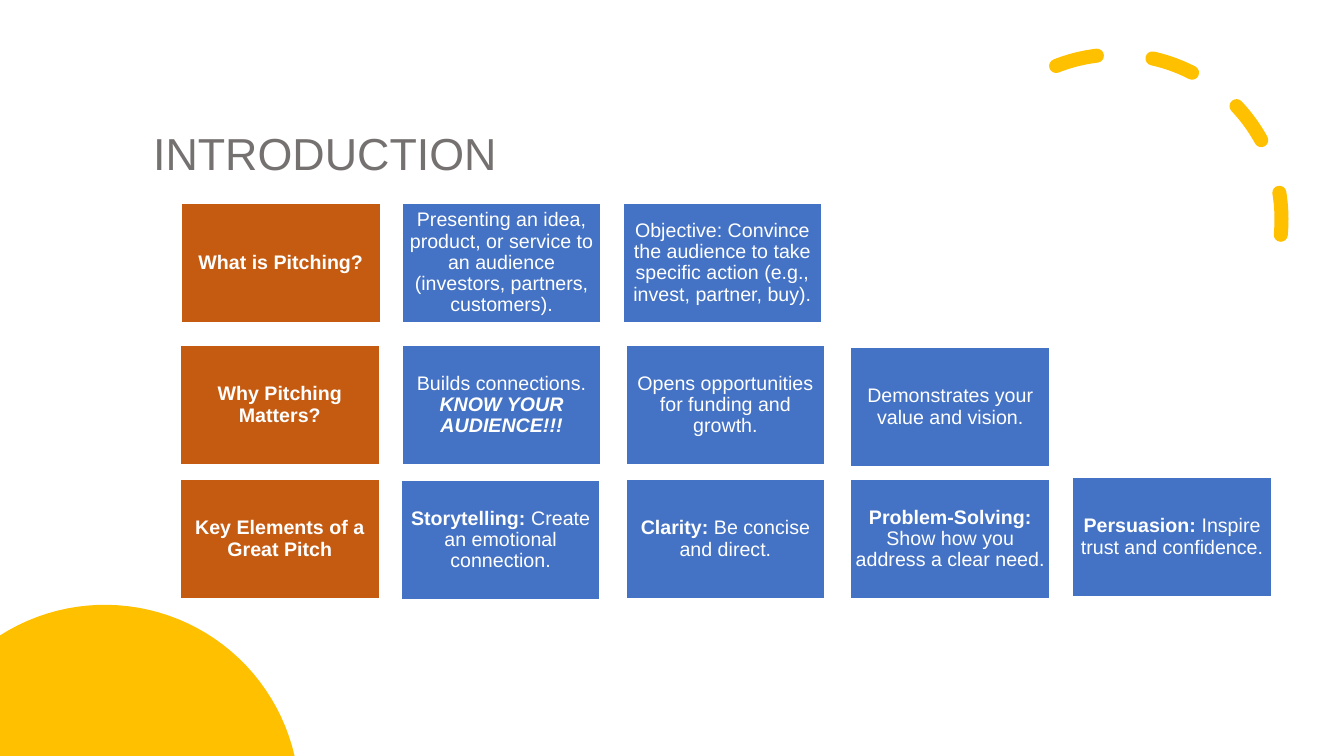
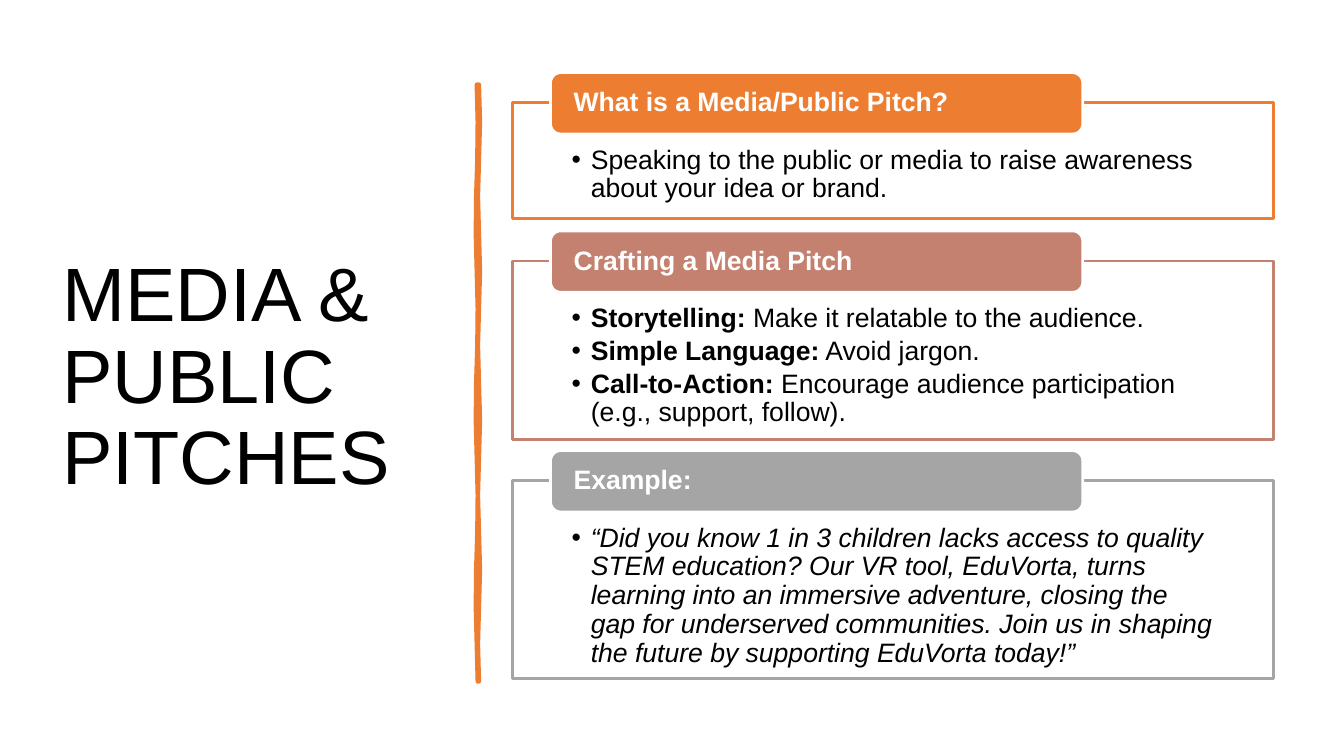
from math import acos, asin, cos, pi, sin

from lxml.etree import SubElement
from pptx import Presentation
from pptx.dml.color import RGBColor
from pptx.enum.dml import MSO_LINE
from pptx.enum.shapes import MSO_SHAPE as Shape
from pptx.enum.text import MSO_ANCHOR as Anchor, PP_ALIGN as Align
from pptx.oxml.ns import qn
from pptx.util import Emu, Pt

PX = 9144
PAGE_WIDTH, PAGE_HEIGHT = 1333, 750
FONT = "Arial"

WHITE = RGBColor(0xFF, 0xFF, 0xFF)
BLACK = RGBColor(0, 0, 0)
TITLE_GRAY = RGBColor(0x76, 0x71, 0x71)
GOLD = RGBColor(0xFF, 0xC0, 0x00)
RUST = RGBColor(0xC5, 0x5A, 0x11)
BLUE = RGBColor(0x44, 0x72, 0xC4)
ORANGE = RGBColor(0xED, 0x7D, 0x31)
ROSE = RGBColor(0xC4, 0x81, 0x70)
GRAY = RGBColor(0xA5, 0xA5, 0xA5)

BOLD = {"bold": True}
ITALIC = {"italic": True}
SHOUT = {"bold": True, "italic": True}

CARD_WIDTH, CARD_HEIGHT = 199, 120
CARD_ROWS = [
    [
        (179, 201, [("What is Pitching?", BOLD)]),
        (398, 201, [("Presenting an idea, product, or service to an audience "
                     "(investors, partners, customers).", {})]),
        (617, 201, [("Objective: Convince the audience to take specific action "
                     "(e.g., invest, partner, buy).", {})]),
    ],
    [
        (178, 342, [("Why Pitching Matters?", BOLD)]),
        (398, 342, [("Builds connections.\n", {}), ("KNOW YOUR AUDIENCE!!!", SHOUT)]),
        (620, 342, [("Opens opportunities for funding and growth.", {})]),
        (843, 344, [("Demonstrates your value and vision.", {})]),
    ],
    [
        (178, 475, [("Key Elements of a Great Pitch", BOLD)]),
        (397, 476, [("Storytelling:", BOLD), (" Create an emotional connection.", {})]),
        (620, 475, [("Clarity:", BOLD), (" Be concise and direct.", {})]),
        (843, 475, [("Problem-Solving:", BOLD), (" Show how you address a clear need.", {})]),
        (1063, 473, [("Persuasion:", BOLD), (" Inspire trust and confidence.", {})]),
    ],
]

PANELS = [
    (102, 115, ORANGE, "What is a Media/Public Pitch?", [
        [("Speaking to the public or media to raise awareness about your idea or brand.", {})],
    ]),
    (259, 177, ROSE, "Crafting a Media Pitch", [
        [("Storytelling:", BOLD), (" Make it relatable to the audience.", {})],
        [("Simple Language:", BOLD), (" Avoid jargon.", {})],
        [("Call-to-Action:", BOLD), (" Encourage audience participation (e.g., support, follow).", {})],
    ]),
    (477, 196, GRAY, "Example:", [
        [("“Did you know 1 in 3 children lacks access to quality STEM education? "
          "Our VR tool, EduVorta, turns learning into an immersive adventure, "
          "closing the gap for underserved communities. Join us in shaping the "
          "future by supporting EduVorta today!”", ITALIC)],
    ]),
]


def px(length):
    return Emu(round(length * PX))


def paint(shape, fill=None, line=None, width=2):
    shape.shadow.inherit = False
    if fill is None:
        shape.fill.background()
    else:
        shape.fill.solid()
        shape.fill.fore_color.rgb = fill
    if line is None:
        shape.line.fill.background()
    else:
        shape.line.color.rgb = line
        shape.line.width = Pt(width)
    return shape


def add_box(page, kind, area, fill, line):
    return paint(page.shapes.add_shape(kind, *map(px, area)), fill, line)


def add_outline(page, points, fill, line=None, width=2):
    corners = [(px(x), px(y)) for x, y in points]
    builder = page.shapes.build_freeform(*corners[0], scale=1.0)
    builder.add_line_segments(corners[1:], close=True)
    return paint(builder.convert_to_shape(), fill, line, width)


def add_bullet(para):
    props = para._p.get_or_add_pPr()
    props.set("marL", str(px(19)))
    props.set("indent", str(px(-19)))
    SubElement(props, qn("a:buFont")).set("typeface", FONT)
    SubElement(props, qn("a:buChar")).set("char", "•")


def add_span(para, text, look):
    for number, piece in enumerate(text.split("\n")):
        if number:
            para.add_line_break()
        if piece:
            span = para.add_run()
            span.text = piece
            span.font.color.rgb = look["color"]
            for name, value in look["font"].items():
                setattr(span.font, name, value)


def write(box, paras, size, color, insets, anchor=Anchor.MIDDLE,
          align=Align.LEFT, bullets=False):
    frame = box.text_frame
    sides = ("margin_left", "margin_top", "margin_right", "margin_bottom")
    settings = dict(zip(sides, map(px, insets)), word_wrap=True, vertical_anchor=anchor)
    for name, value in settings.items():
        setattr(frame, name, value)
    for number, spans in enumerate(paras):
        para = frame.add_paragraph() if number else frame.paragraphs[0]
        para.alignment = align
        para.line_spacing = 0.9
        if bullets:
            para.space_after = Pt(3)
            add_bullet(para)
        for text, style in spans:
            font = {"name": FONT, "size": Pt(size), **style}
            add_span(para, text, {"color": color, "font": font})


def add_title(page, text, area, size, color, anchor):
    box = page.shapes.add_textbox(*map(px, area))
    write(box, [[(text, {})]], size, color, (10, 5, 10, 5), anchor)


def add_dashed_arc(page):
    arc = add_box(page, Shape.ARC, (944, 54, 327, 327), None, GOLD)
    arc.adjustments[0], arc.adjustments[1] = 144.42, 0
    arc.rotation = 66.1
    arc.element.spPr.get_or_add_xfrm().set("flipH", "1")
    arc.line.width = Pt(10)
    arc.line.dash_style = MSO_LINE.DASH
    arc.line._get_or_add_ln().set("cap", "rnd")


def add_corner_disc(page):
    center_x, center_y, radius, steps = 104, 793, 193, 36
    start = acos(-center_x / radius)
    end = asin((center_y - PAGE_HEIGHT) / radius)
    angles = [start + (end - start) * step / steps for step in range(steps + 1)]
    rim = [(center_x + radius * cos(a), center_y - radius * sin(a)) for a in angles]
    add_outline(page, [*rim, (0, PAGE_HEIGHT)], GOLD)


def add_brush_stroke(page):
    top, bottom, step = 84, 676, 37

    def edge(x, period):
        return [(x + sin(2 * pi * (y - top) / period), y)
                for y in range(top, bottom + 1, step)]

    add_outline(page, edge(475, 148) + edge(473, 185)[::-1], ORANGE, ORANGE, 3.25)


def add_card(page, left, top, spans, fill):
    card = add_box(page, Shape.RECTANGLE, (left, top, CARD_WIDTH, CARD_HEIGHT), fill, WHITE)
    write(card, [spans], 14, WHITE, (5, 6, 5, 6), align=Align.CENTER)


def add_panel(page, top, height, color, heading, paras):
    body = add_box(page, Shape.RECTANGLE, (508, top, 755, height), WHITE, color)
    write(body, paras, 19, BLACK, (59, 43, 59, 15), Anchor.TOP, bullets=True)
    tab = add_box(page, Shape.ROUNDED_RECTANGLE, (546, top - 30, 528, 61), color, WHITE)
    write(tab, [[(heading, BOLD)]], 19, WHITE, (20, 0, 20, 0))


def build_introduction(page):
    add_dashed_arc(page)
    add_corner_disc(page)
    add_title(page, "INTRODUCTION", (142, 94, 599, 90), 32, TITLE_GRAY, Anchor.BOTTOM)
    for cards in CARD_ROWS:
        for column, card in enumerate(cards):
            add_card(page, *card, BLUE if column else RUST)


def build_media_pitches(page):
    add_title(page, "MEDIA & PUBLIC\nPITCHES", (52, 70, 392, 611), 54, BLACK, Anchor.MIDDLE)
    add_brush_stroke(page)
    for panel in PANELS:
        add_panel(page, *panel)


def main():
    deck = Presentation()
    deck.slide_width, deck.slide_height = px(PAGE_WIDTH), px(PAGE_HEIGHT)
    for build in (build_introduction, build_media_pitches):
        build(deck.slides.add_slide(deck.slide_layouts[6]))
    deck.save("out.pptx")


if __name__ == "__main__":
    main()
